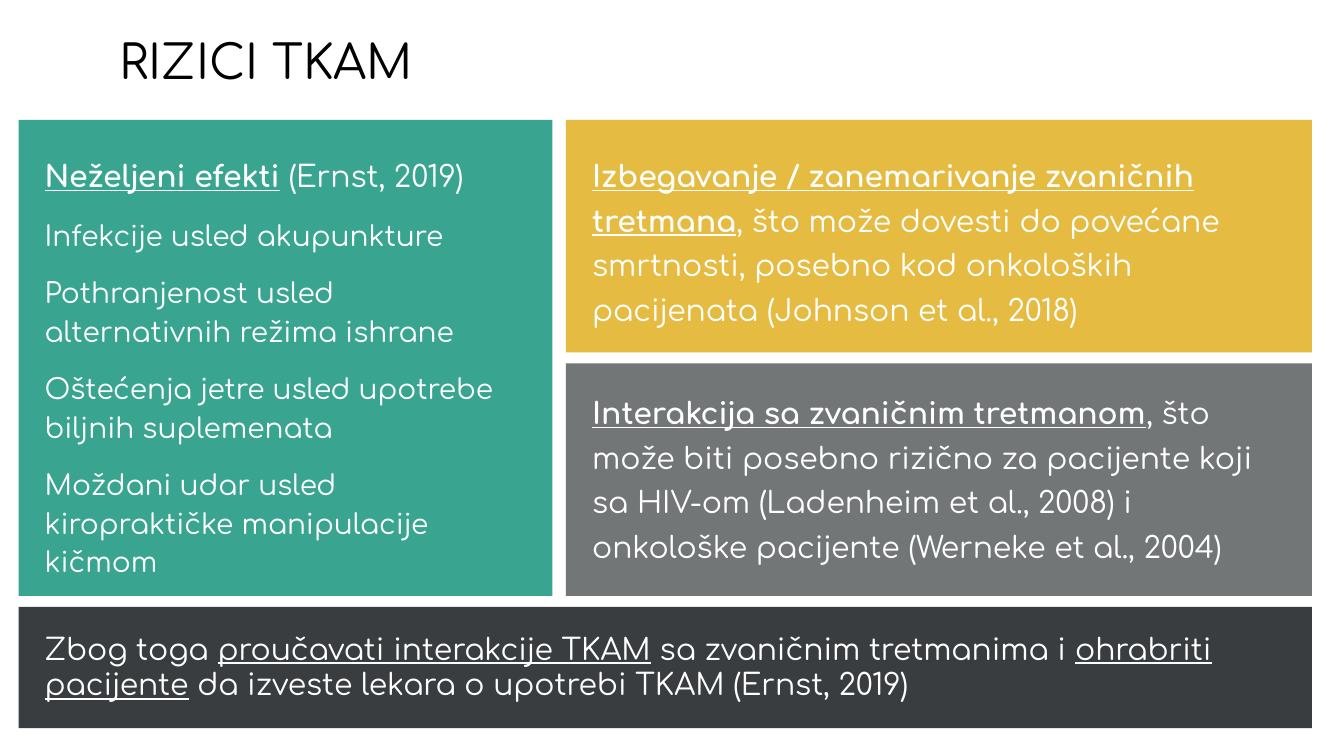
import pptx
import pptx.dml.color
import pptx.enum.shapes
import pptx.enum.text
import pptx.util

Pt = pptx.util.Pt
RGBColor = pptx.dml.color.RGBColor

BLACK = RGBColor(0x00, 0x00, 0x00)
WHITE = RGBColor(0xFF, 0xFF, 0xFF)
TEAL = RGBColor(0x39, 0xA5, 0x90)
YELLOW = RGBColor(0xE6, 0xBB, 0x41)
GRAY = RGBColor(0x73, 0x76, 0x77)
CHARCOAL = RGBColor(0x3A, 0x3D, 0x40)

LEFT, MIDDLE, RIGHT = 10, 303.2, 702.8
LEFT_WIDTH = 286
RIGHT_WIDTH = RIGHT - MIDDLE
TOP, ROW_HEIGHT, ROW_GAP = 64.3, 124.6, 5.8
SECOND_TOP = TOP + ROW_HEIGHT + ROW_GAP
FOOTER_TOP = SECOND_TOP + ROW_HEIGHT + ROW_GAP
FOOTER_HEIGHT = 65
LEFT_TEXT, RIGHT_TEXT = 16.8, 310.2
RIGHT_TEXT_WIDTH = 377.3

KEY = {"bold": True, "underline": True}
UNDERLINED = {"underline": True}
PLAIN = {}


def add_span(para, text, *, size, color=WHITE, font="Comfortaa", bold=False, underline=False):
    span = para.add_run()
    span.text = text
    span.font.name = font
    span.font.size = Pt(size)
    span.font.color.rgb = color
    span.font.bold = bold
    span.font.underline = underline


class SlideBuilder:
    inset = 7.2

    def __init__(self, page):
        self.page = page

    def set_insets(self, frame):
        frame.word_wrap = True
        frame.margin_left = frame.margin_right = Pt(self.inset)
        frame.margin_top = frame.margin_bottom = Pt(self.inset)

    def title(self, text, left, top, width, height):
        box = self.page.shapes.title
        box.left, box.top, box.width, box.height = map(Pt, (left, top, width, height))
        frame = box.text_frame
        self.set_insets(frame)
        frame.auto_size = pptx.enum.text.MSO_AUTO_SIZE.NONE
        frame.vertical_anchor = pptx.enum.text.MSO_ANCHOR.MIDDLE
        para = frame.paragraphs[0]
        para.alignment = pptx.enum.text.PP_ALIGN.LEFT
        add_span(para, text, size=25.2, color=BLACK)

    def card(self, left, top, width, height, color):
        card = self.page.shapes.add_shape(
            pptx.enum.shapes.MSO_SHAPE.RECTANGLE, *map(Pt, (left, top, width, height))
        )
        card.shadow.inherit = False
        card.fill.solid()
        card.fill.fore_color.rgb = color
        card.line.fill.background()

    def text(self, paragraphs, left, top, width, height, size=16, spacing=1.25, gap=0):
        box = self.page.shapes.add_textbox(*map(Pt, (left, top, width, height)))
        frame = box.text_frame
        self.set_insets(frame)
        frame.auto_size = pptx.enum.text.MSO_AUTO_SIZE.SHAPE_TO_FIT_TEXT
        for index, spans in enumerate(paragraphs):
            para = frame.add_paragraph() if index else frame.paragraphs[0]
            para.line_spacing = spacing
            para.space_before = Pt(gap if index else 0)
            for text, style in spans:
                add_span(para, text, size=size, **style)


def main():
    deck = pptx.Presentation()
    deck.slide_width, deck.slide_height = Pt(720), Pt(405)
    builder = SlideBuilder(deck.slides.add_slide(deck.slide_layouts[5]))

    builder.title("RIZICI TKAM", 57, 10, 598, 45.4)

    builder.card(LEFT, TOP, LEFT_WIDTH, 2 * ROW_HEIGHT + ROW_GAP, TEAL)
    builder.card(MIDDLE, TOP, RIGHT_WIDTH, ROW_HEIGHT, YELLOW)
    builder.card(MIDDLE, SECOND_TOP, RIGHT_WIDTH, ROW_HEIGHT, GRAY)
    builder.card(LEFT, FOOTER_TOP, RIGHT - LEFT, FOOTER_HEIGHT, CHARCOAL)

    builder.text(
        [[("Neželjeni efekti", KEY), (" (Ernst, 2019)", PLAIN)]],
        LEFT_TEXT, 72.4, 249, 34,
    )
    effects = [
        "Infekcije usled akupunkture",
        "Pothranjenost usled alternativnih režima ishrane",
        "Oštećenja jetre usled upotrebe biljnih suplemenata",
        "Moždani udar usled kiropraktičke manipulacije kičmom",
    ]
    builder.text(
        [[(effect, PLAIN)] for effect in effects],
        LEFT_TEXT, 107.2, 269.3, 209.5, size=15, spacing=1.15, gap=10,
    )
    builder.text(
        [[
            ("Izbegavanje / zanemarivanje zvaničnih tretmana", KEY),
            (", što može dovesti do povećane smrtnosti, posebno kod onkoloških "
             "pacijenata (Johnson et al., 2018)", PLAIN),
        ]],
        RIGHT_TEXT, 72.4, RIGHT_TEXT_WIDTH, 106.6,
    )
    builder.text(
        [[
            ("Interakcija sa zvaničnim tretmanom", KEY),
            (", što može biti posebno rizično za pacijente koji sa HIV-om "
             "(Ladenheim et al., 2008) i onkološke pacijente (Werneke et al., 2004)", PLAIN),
        ]],
        RIGHT_TEXT, 199.4, RIGHT_TEXT_WIDTH, 106.6,
    )
    builder.text(
        [[
            ("Zbog toga ", PLAIN),
            ("proučavati interakcije TKAM", UNDERLINED),
            (" sa zvaničnim tretmanima i ", PLAIN),
            ("ohrabriti pacijente", UNDERLINED),
            (" da izveste lekara o upotrebi TKAM (Ernst, 2019)", PLAIN),
        ]],
        LEFT_TEXT, 330.5, 670.3, 53.3, spacing=1.0,
    )

    deck.save("out.pptx")


if __name__ == "__main__":
    main()
